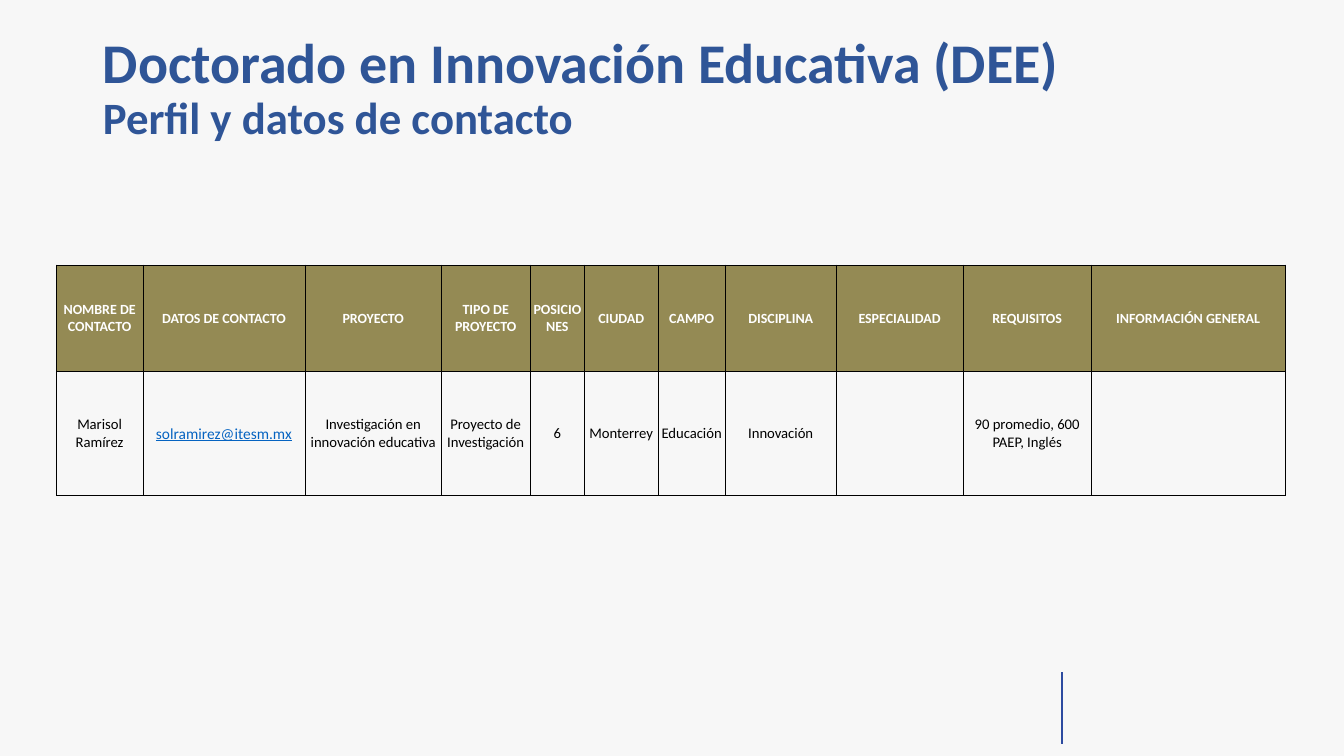
import dataclasses

import pptx
import pptx.dml.color
import pptx.enum.shapes
import pptx.enum.text
import pptx.oxml
import pptx.oxml.ns
import pptx.util
from pptx.util import Cm

COLORS = {
    "background": "F7F7F7",
    "title": "2F5597",
    "rule": "2D4BA0",
    "header": "948A54",
    "header_text": "FFFFFF",
    "body_text": "000000",
    "email": "0563C1",
    "border": "000000",
}
FONT = "Calibri"
THIN, THICK = 0.5, 1


@dataclasses.dataclass(frozen=True)
class Column:
    heading: str
    value: str
    width: float
    value_format: dict = dataclasses.field(default_factory=dict)


EMAIL_FORMAT = {"size": 11, "color": "email", "underline": True}
COLUMNS = [
    Column("NOMBRE DE CONTACTO", "Marisol Ramírez", 2.18),
    Column("DATOS DE CONTACTO", "solramirez@itesm.mx", 4.09, EMAIL_FORMAT),
    Column("PROYECTO", "Investigación en innovación educativa", 3.43),
    Column("TIPO DE PROYECTO", "Proyecto de Investigación", 2.24),
    Column("POSICIONES", "6", 1.37),
    Column("CIUDAD", "Monterrey", 1.85),
    Column("CAMPO", "Educación", 1.7),
    Column("DISCIPLINA", "Innovación", 2.79),
    Column("ESPECIALIDAD", "", 3.2),
    Column("REQUISITOS", "90 promedio, 600 PAEP, Inglés", 3.23),
    Column("INFORMACIÓN GENERAL", "", 4.88),
]
ROW_HEIGHTS = [2.68, 3.12]


def rgb(name: str) -> pptx.dml.color.RGBColor:
    return pptx.dml.color.RGBColor.from_string(COLORS[name])


def add_text(paragraph, text: str, *, size: float = 10.5, color: str = "body_text",
             bold: bool = False, underline: bool = False) -> None:
    run = paragraph.add_run()
    run.text = text
    font = run.font
    font.name, font.size = FONT, pptx.util.Pt(size)
    font.bold, font.underline = bold, underline
    font.color.rgb = rgb(color)


def set_borders(cell, **widths: float) -> None:
    properties = cell._tc.get_or_add_tcPr()
    for side in ("L", "R", "T", "B"):
        width = pptx.util.Pt(widths.get(side, THIN))
        properties.append(pptx.oxml.parse_xml(
            f'<a:ln{side} {pptx.oxml.ns.nsdecls("a")} w="{width}"><a:solidFill>'
            f'<a:srgbClr val="{COLORS["border"]}"/></a:solidFill></a:ln{side}>'))


def fill_cell(cell, text: str, **text_format) -> None:
    cell.vertical_anchor = pptx.enum.text.MSO_ANCHOR.MIDDLE
    cell.margin_left = cell.margin_right = cell.margin_top = Cm(0.02)
    cell.margin_bottom = Cm(0)
    if text:
        paragraph = cell.text_frame.paragraphs[0]
        paragraph.alignment = pptx.enum.text.PP_ALIGN.CENTER
        add_text(paragraph, text, **text_format)


def add_title(slide) -> None:
    title = slide.shapes.title
    title.left, title.top, title.width, title.height = Cm(2.34), Cm(0.58), Cm(29.21), Cm(3.36)
    frame = title.text_frame
    frame.word_wrap = True
    frame.auto_size = pptx.enum.text.MSO_AUTO_SIZE.NONE
    frame.vertical_anchor = pptx.enum.text.MSO_ANCHOR.MIDDLE
    paragraph = frame.paragraphs[0]
    paragraph.alignment = pptx.enum.text.PP_ALIGN.LEFT
    paragraph.line_spacing = 0.9
    add_text(paragraph, "Doctorado en Innovación Educativa (DEE)", size=40, color="title", bold=True)
    paragraph.add_line_break()
    add_text(paragraph, "Perfil y datos de contacto", size=32, color="title", bold=True)


def add_contact_table(slide) -> None:
    total_width = sum(column.width for column in COLUMNS)
    table = slide.shapes.add_table(
        len(ROW_HEIGHTS), len(COLUMNS), Cm(1.42), Cm(6.68),
        Cm(total_width), Cm(sum(ROW_HEIGHTS))).table
    table.first_row = table.horz_banding = False
    for row, height in zip(table.rows, ROW_HEIGHTS):
        row.height = Cm(height)
    for index, column in enumerate(COLUMNS):
        table.columns[index].width = Cm(column.width)
        header, body = table.cell(0, index), table.cell(1, index)
        set_borders(header, T=THICK)
        header.fill.solid()
        header.fill.fore_color.rgb = rgb("header")
        fill_cell(header, column.heading, size=10, color="header_text", bold=True)
        set_borders(body)
        body.fill.background()
        fill_cell(body, column.value, **column.value_format)


def add_footer_rule(slide) -> None:
    rule = slide.shapes.add_connector(
        pptx.enum.shapes.MSO_CONNECTOR.STRAIGHT, Cm(26.77), Cm(16.94), Cm(26.77), Cm(18.75))
    rule.line.color.rgb = rgb("rule")
    rule.line.width = pptx.util.Pt(1.5)
    rule._element.spPr.append(
        pptx.oxml.parse_xml(f'<a:effectLst {pptx.oxml.ns.nsdecls("a")}/>'))


def main() -> None:
    presentation = pptx.Presentation()
    presentation.slide_width, presentation.slide_height = Cm(33.87), Cm(19.05)
    # Title-only layout on a pale grey background
    slide = presentation.slides.add_slide(presentation.slide_layouts[5])
    slide.background.fill.solid()
    slide.background.fill.fore_color.rgb = rgb("background")
    # Slide parts, from back to front
    add_footer_rule(slide)
    add_title(slide)
    add_contact_table(slide)
    presentation.save("out.pptx")


if __name__ == "__main__":
    main()
